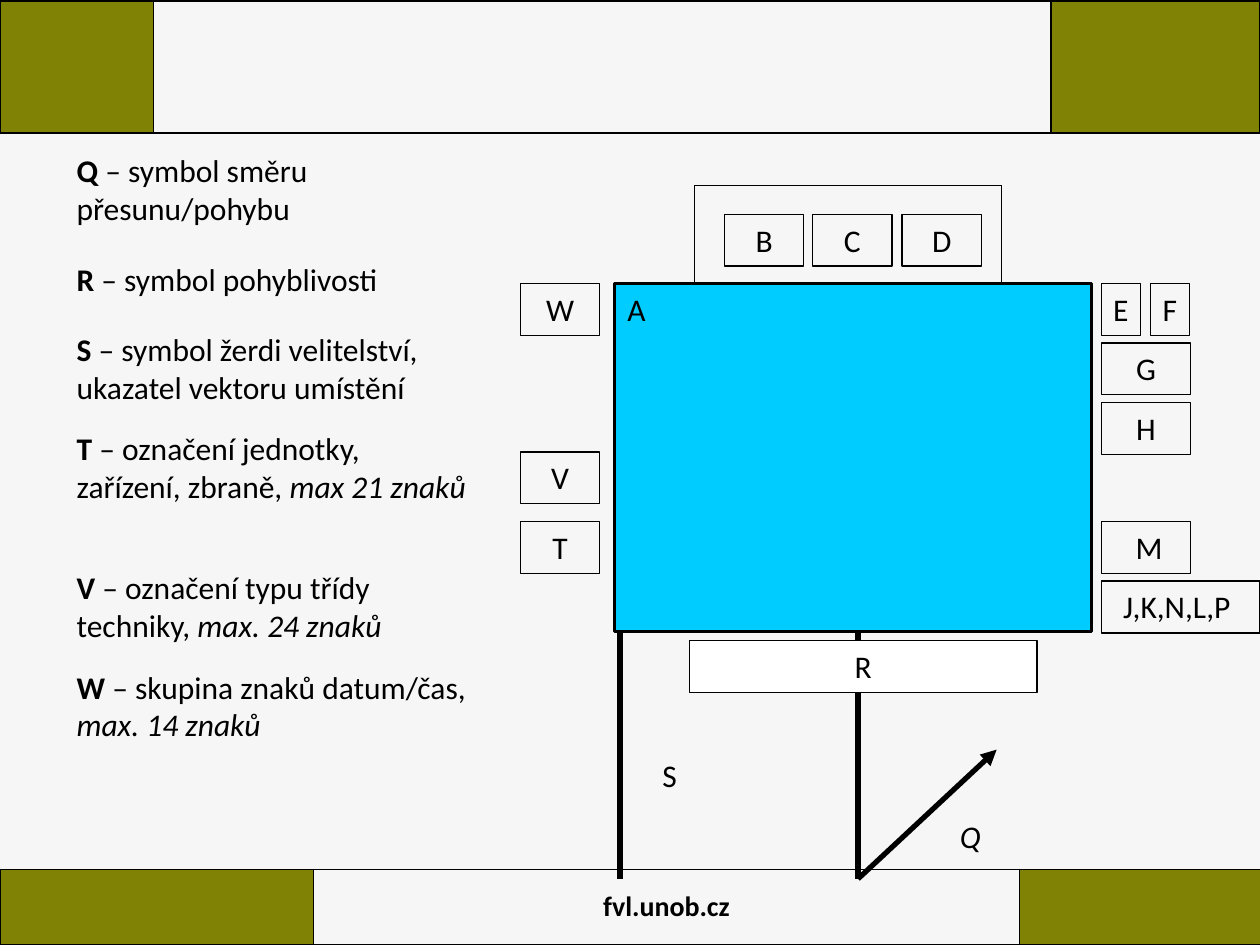
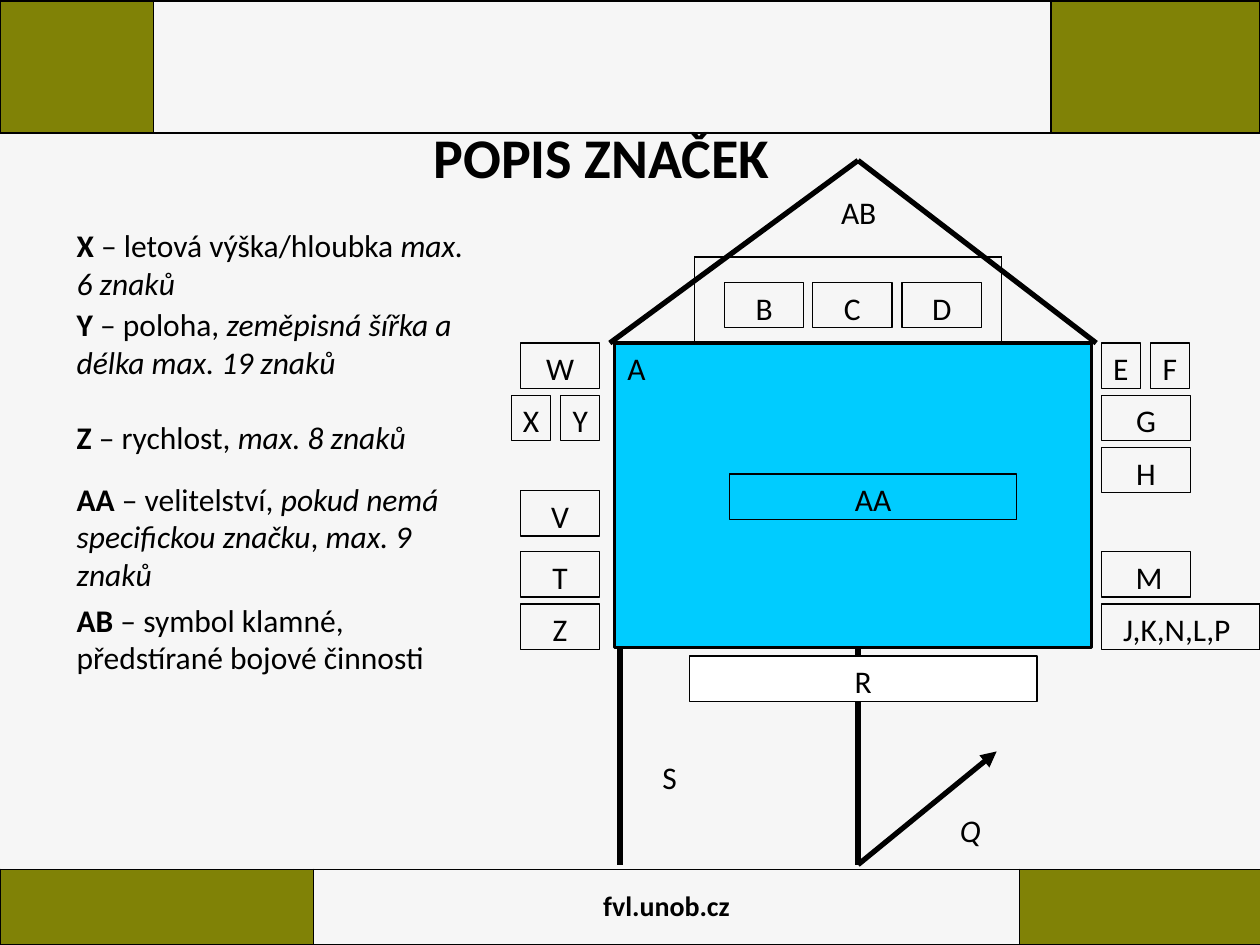
from dataclasses import dataclass
from itertools import pairwise

from lxml import etree
from pptx import Presentation, util as u
from pptx.dml.color import RGBColor
from pptx.enum import shapes, text
from pptx.oxml.ns import qn


@dataclass(frozen=True)
class Theme:
    font: str = "Calibri"
    ink: str = "000000"
    page: str = "F6F6F6"
    olive: str = "808206"
    sky: str = "00CCFF"
    white: str = "FFFFFF"
    body: int = 18
    foot: int = 16
    title: int = 32
    hair: float = 0.75
    edge: float = 1.75
    thick: float = 3


T = Theme()
WIDE, HIGH = u.Inches(10), u.Inches(7.5)
MID = text.PP_ALIGN.CENTER
LEFT = text.PP_ALIGN.LEFT


@dataclass(frozen=True)
class Grid:
    """Rows of the unit sign: top and row height in percent of the slide."""
    top: float
    row: float

    def y(self, n):
        return self.top + n * self.row


def px(share):
    return round(WIDE * share / 100)


def py(share):
    return round(HIGH * share / 100)


def color(code):
    return RGBColor.from_string(code)


# Text
def write(frame, runs, size=T.body, align=LEFT):
    """Each run is (words, style); style holds b for bold, i for italic."""
    para = frame.paragraphs[0]
    para.alignment = align
    for words, style in runs:
        run = para.add_run()
        run.text = words
        font = run.font
        font.name, font.size = T.font, u.Pt(size)
        font.bold, font.italic = "b" in style, "i" in style
        font.color.rgb = color(T.ink)


def label(slide, x, y, w, h, runs, size=T.body, align=LEFT):
    frame = slide.shapes.add_textbox(px(x), py(y), px(w), py(h)).text_frame
    frame.word_wrap = True
    write(frame, runs, size, align)


def notes(slide, items):
    for y, *runs in items:
        label(slide, 5.1, y, 33.1, 9.3, runs)


# Shapes
def box(slide, x, y, w, h, words, fill=None, line=T.hair, align=MID,
        pad=(0, 0)):
    rect = slide.shapes.add_shape(shapes.MSO_SHAPE.RECTANGLE,
                                  px(x), py(y), px(w), py(h))
    rect.shadow.inherit = False
    if fill:
        rect.fill.solid()
        rect.fill.fore_color.rgb = color(fill)
    else:
        rect.fill.background()
    rect.line.color.rgb = color(T.ink)
    rect.line.width = u.Pt(line)
    frame = rect.text_frame
    frame.word_wrap = True
    frame.vertical_anchor = text.MSO_ANCHOR.TOP
    frame.margin_left, frame.margin_right = map(px, pad)
    write(frame, [(words, "")], align=align)


def lines(slide, points, width, arrow=False):
    for (ax, ay), (bx, by) in pairwise(points):
        link = slide.shapes.add_connector(shapes.MSO_CONNECTOR.STRAIGHT,
                                          px(ax), py(ay), px(bx), py(by))
        link.line.color.rgb = color(T.ink)
        link.line.width = u.Pt(width)
        if arrow:
            etree.SubElement(link.line._get_or_add_ln(), qn("a:tailEnd"),
                             type="triangle")
        etree.SubElement(link._element.spPr, qn("a:effectLst"))


# Bands
def border(cell):
    props = cell._tc.get_or_add_tcPr()
    for side in ("lnL", "lnR", "lnT", "lnB"):
        edge = etree.SubElement(props, qn("a:" + side), w=str(u.Pt(1)))
        fill = etree.SubElement(edge, qn("a:solidFill"))
        etree.SubElement(fill, qn("a:srgbClr"), val=T.ink)


def band(slide, y, h, cols, words=""):
    table = slide.shapes.add_table(1, 3, 0, py(y), px(sum(cols)),
                                   py(h)).table
    table.first_row = table.horz_banding = False
    for n, share in enumerate(cols):
        table.columns[n].width = px(share)
        cell = table.cell(0, n)
        border(cell)
        if n == 1:
            cell.fill.background()
        else:
            cell.fill.solid()
            cell.fill.fore_color.rgb = color(T.olive)
    if words:
        cell = table.cell(0, 1)
        cell.vertical_anchor = text.MSO_ANCHOR.MIDDLE
        write(cell.text_frame, [(words, "b")], T.foot, MID)


def page(deck):
    slide = deck.slides.add_slide(deck.slide_layouts[6])
    slide.background.fill.solid()
    slide.background.fill.fore_color.rgb = color(T.page)
    band(slide, 92, 8, (24.9, 56, 19.2), "fvl.unob.cz")
    band(slide, 0.1, 14, (12.2, 71.2, 16.6))
    return slide


# Unit sign
FIELDS = [  # words, left, row, width
    ("B", 57.5, -1.16, 6.3), ("C", 64.5, -1.16, 6.3), ("D", 71.6, -1.16, 6.3),
    ("E", 87.4, 0, 3.1), ("F", 91.3, 0, 3.1),
    ("G", 87.4, 1, 7.1), ("H", 87.4, 2, 7.1),
    ("W", 41.3, 0, 6.3), ("V", 41.3, 2.83, 6.3), ("T", 41.3, 4, 6.3),
]
EXTRA = [("X", 40.6, 1, 3.1), ("Y", 44.5, 1, 3.1),
         ("Z", 41.3, 5, 6.3), ("AA", 57.9, 2.51, 22.8)]


def sign(slide, grid, fields):
    y, tall = grid.y, 0.87 * grid.row
    base, foot = y(5.84), y(10)
    box(slide, 48.8, y(0), 37.8, base - y(0), "A", T.sky, T.edge, LEFT, (1, 1))
    lines(slide, [(55.1, y(0)), (55.1, y(-1.65)), (79.5, y(-1.65)),
                  (79.5, y(0))], T.hair)
    for words, x, row, w in fields:
        box(slide, x, y(row), w, tall, words)
    box(slide, 87.4, y(4), 7.1, tall, "M", pad=(0.5, 0))
    box(slide, 87.4, y(5), 12.6, tall, "J,K,N,L,P", pad=(0, 0.6))
    # Staff, mobility and direction of movement
    lines(slide, [(49.2, base), (49.2, foot)], T.thick)
    lines(slide, [(68.1, base), (68.1, foot)], T.thick)
    lines(slide, [(68.1, foot), (79.1, y(7.83))], T.thick, arrow=True)
    box(slide, 54.7, y(6), 27.6, tall, "R", T.white)
    label(slide, 75.2, y(8.85), 3.1, tall, [("Q", "i")])
    label(slide, 50, y(7.83), 6.3, tall, [("S", "")], align=MID)


def roof(slide, grid):
    y = grid.y
    lines(slide, [(48.4, y(0)), (68.1, y(-3.5)), (87, y(0))], T.thick)
    label(slide, 64.2, y(-3), 7.9, grid.row, [("AB", "")], align=MID)


def main():
    deck = Presentation()
    deck.slide_width, deck.slide_height = WIDE, HIGH

    # Fields Q to W
    slide = page(deck)
    sign(slide, Grid(30, 6.3), FIELDS)
    notes(slide, [
        (15.3, ("Q", "b"), (" – symbol směru přesunu/pohybu", "")),
        (26.9, ("R", "b"), (" – symbol pohyblivosti", "")),
        (34.3, ("S", "b"),
         (" – symbol žerdi velitelství, ukazatel vektoru umístění", "")),
        (44.8, ("T", "b"), (" – označení jednotky, zařízení, zbraně, ", ""),
         ("max 21 znaků", "i")),
        (59.5, ("V", "b"), (" – označení typu třídy techniky, ", ""),
         ("max. 24 znaků", "i")),
        (70, ("W", "b"), (" – skupina znaků datum/čas, ", ""),
         ("max. 14 znaků", "i")),
    ])

    # Fields X to AB
    slide = page(deck)
    label(slide, 7.2, 12.3, 81.1, 7.5, [("POPIS ZNAČEK", "b")], T.title, MID)
    grid = Grid(36.3, 5.52)
    sign(slide, grid, FIELDS + EXTRA)
    roof(slide, grid)
    notes(slide, [
        (23.3, ("X", "b"), (" – letová výška/hloubka ", ""),
         ("max. 6 znaků", "i")),
        (31.6, ("Y", "b"), (" – poloha, ", ""),
         ("zeměpisná šířka a délka max. 19 znaků", "i")),
        (43.6, ("Z", "b"), (" – rychlost,", ""), (" max. 8 znaků", "i")),
        (50.1, ("AA", "b"), (" – velitelství, ", ""),
         ("pokud nemá specifickou značku", "i"), (",", ""),
         (" max. 9 znaků", "i")),
        (62.9, ("AB", "b"),
         (" – symbol klamné, předstírané bojové činnosti", "")),
    ])
    deck.save("out.pptx")


if __name__ == "__main__":
    main()
